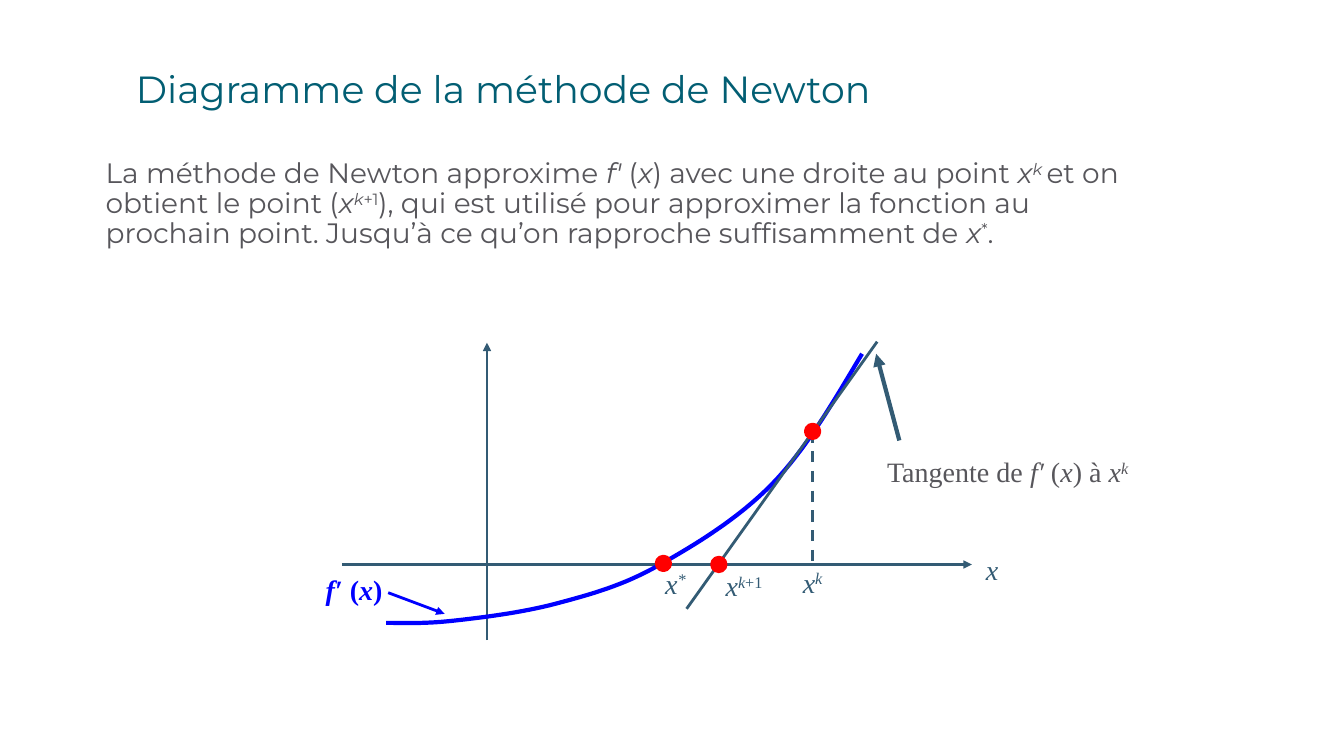
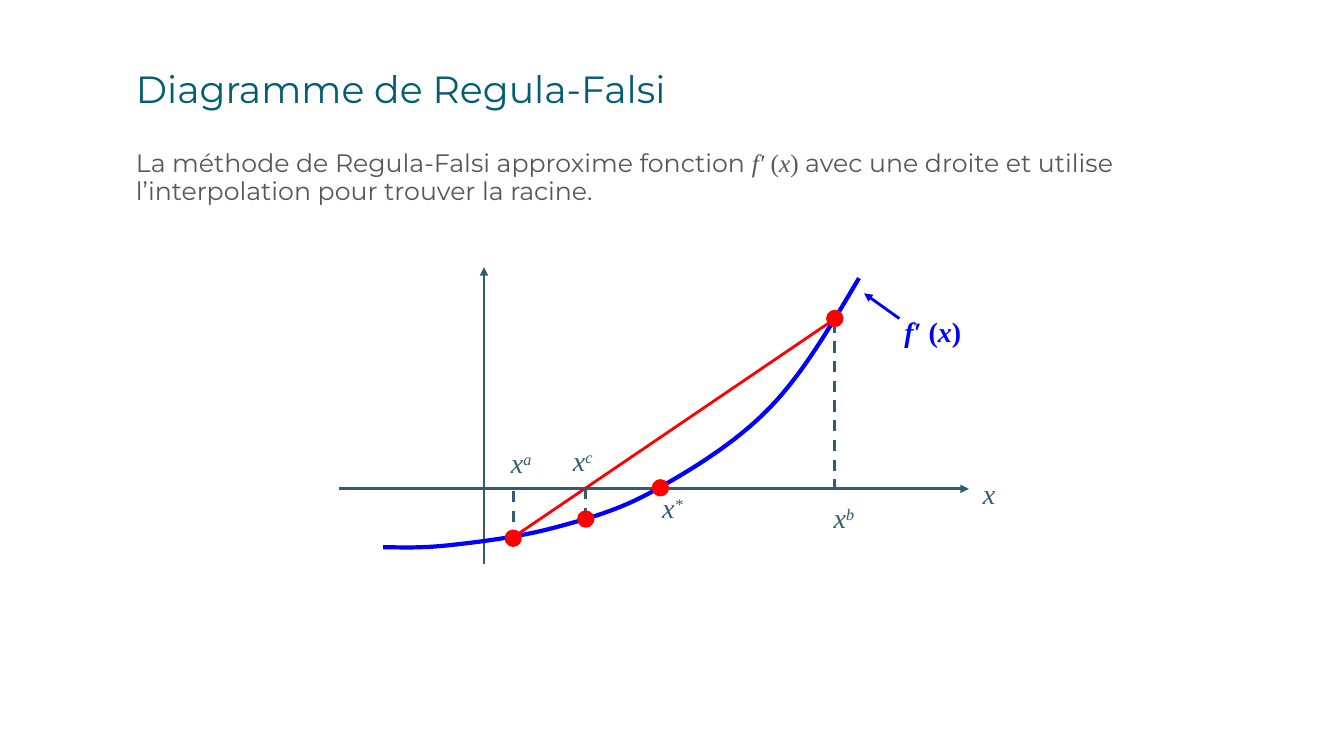
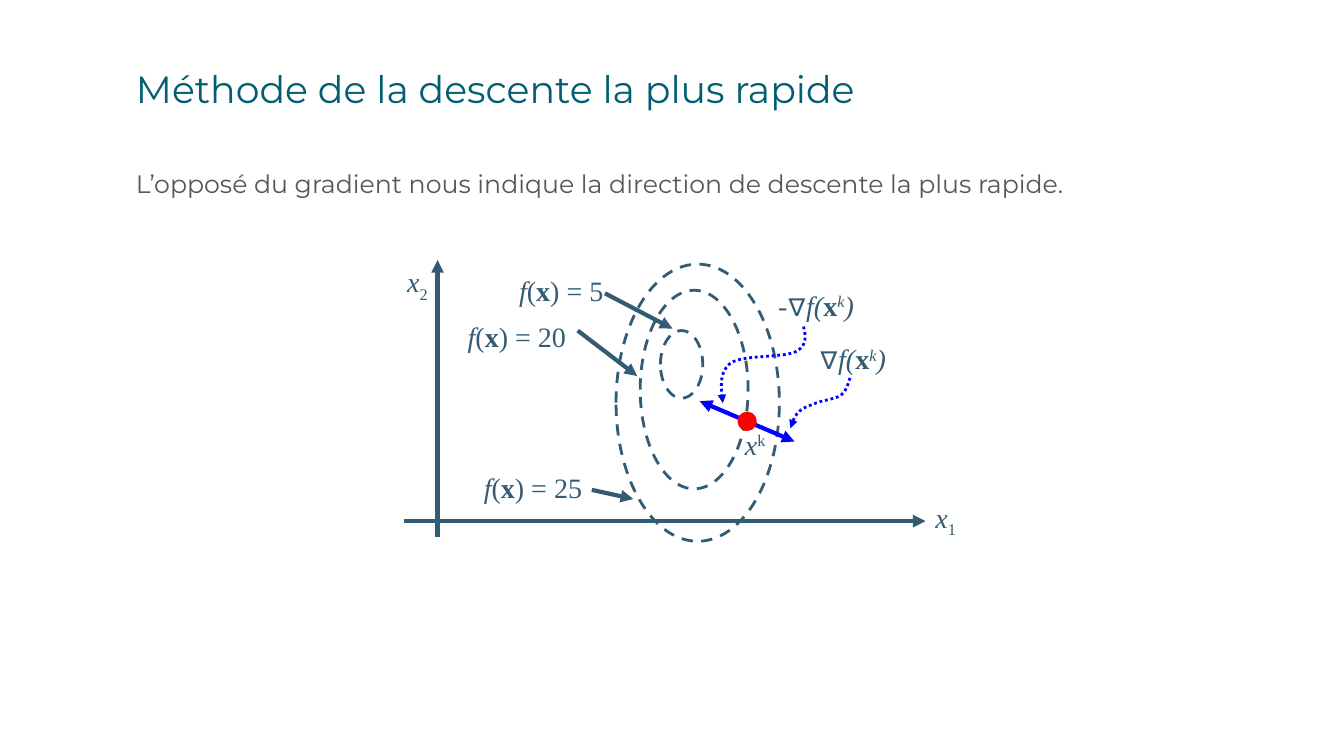
import lxml.etree
import pptx
import pptx.dml.color
import pptx.enum.dml
import pptx.enum.shapes
import pptx.enum.text
import pptx.oxml.ns
import pptx.util

Inches = pptx.util.Inches
SHAPE = pptx.enum.shapes.MSO_SHAPE
DASH = pptx.enum.dml.MSO_LINE.DASH
DOTS = pptx.enum.dml.MSO_LINE.ROUND_DOT
LEFT = pptx.enum.text.PP_ALIGN.LEFT
CENTER = pptx.enum.text.PP_ALIGN.CENTER

TEAL, GREY, SLATE = "025E73", "57565B", "335B74"
BLUE, RED = "0000FF", "FF0000"
SANS, SERIF = "Montserrat", "Times New Roman"
BASELINES = {"^": "30000", "_": "-25000"}

F_PRIME = [("f′ ", "i"), ("(", ""), ("x", "i"), (")", "")]
X_K = [("x", "i"), ("k", "i^")]
GRADIENT = [("x", "b"), ("k", "i^"), (")", "i")]
CURVE = [
    (3.83, 6.18),
    (4.02, 6.18), (4.2, 6.19), (4.48, 6.16),
    (4.76, 6.13), (5.17, 6.08), (5.51, 5.99),
    (5.85, 5.9), (6.18, 5.81), (6.53, 5.61),
    (6.89, 5.41), (7.33, 5.14), (7.66, 4.8),
    (8, 4.45), (8.27, 3.98), (8.55, 3.51),
]


def rgb(hex_colour):
    return pptx.dml.color.RGBColor.from_string(hex_colour)


def bezier_points(controls, steps=16):
    points = [controls[0]]
    for first in range(0, len(controls) - 1, 3):
        a, b, c, d = controls[first:first + 4]
        for step in range(1, steps + 1):
            t = step / steps
            u = 1 - t
            points.append(tuple(
                u**3 * a[i] + 3 * u * u * t * b[i] + 3 * u * t * t * c[i] + t**3 * d[i]
                for i in (0, 1)))
    return points


class Deck:
    def __init__(self):
        self.prs = pptx.Presentation()
        self.prs.slide_width = Inches(13.33)
        self.prs.slide_height = Inches(7.5)
        self.slide = None

    def start(self, title, body, body_box, body_size):
        self.slide = self.prs.slides.add_slide(self.prs.slide_layouts[6])
        self.text(body_box, body, size=body_size, font=SANS, colour=GREY, spacing=0.9, inset=0.1)
        self.text((1.25, 0.65, 11.5, 0.75), [(title, "")], size=27, font=SANS,
                  colour=TEAL, spacing=0.9)

    def text(self, box, runs, size=20, font=SERIF, colour=SLATE, bold=False,
             align=LEFT, spacing=1.0, inset=0.05):
        frame = self.slide.shapes.add_textbox(*map(Inches, box)).text_frame
        frame_format = {
            "word_wrap": True,
            "vertical_anchor": pptx.enum.text.MSO_ANCHOR.TOP,
            "margin_left": Inches(0.1), "margin_right": Inches(0.1),
            "margin_top": Inches(inset), "margin_bottom": Inches(inset),
        }
        for name, value in frame_format.items():
            setattr(frame, name, value)
        paragraph = frame.paragraphs[0]
        paragraph.alignment = align
        paragraph.line_spacing = spacing
        for words, marks in runs:
            run = paragraph.add_run()
            run.text = words
            run_format = {
                "name": SERIF if "s" in marks else font,
                "size": pptx.util.Pt(size),
                "bold": bold or "b" in marks,
                "italic": "i" in marks,
            }
            for name, value in run_format.items():
                setattr(run.font, name, value)
            run.font.color.rgb = rgb(colour)
            for mark, offset in BASELINES.items():
                if mark in marks:
                    run.font._element.set("baseline", offset)

    def label(self, centre, top, runs):
        self.text((centre - 0.4, top, 0.8, 0.43), runs, align=CENTER)

    def stroke(self, shape, colour, width, dash, arrow):
        shape.line.color.rgb = rgb(colour)
        shape.line.width = pptx.util.Pt(width)
        if dash:
            shape.line.dash_style = dash
        if arrow:
            outline = shape._element.spPr.find(pptx.oxml.ns.qn("a:ln"))
            lxml.etree.SubElement(outline, pptx.oxml.ns.qn("a:tailEnd"), type="triangle")

    def line(self, start, end, colour=SLATE, width=2, dash=None, arrow=False):
        connector = self.slide.shapes.add_connector(
            pptx.enum.shapes.MSO_CONNECTOR.STRAIGHT, *map(Inches, (*start, *end)))
        self.stroke(connector, colour, width, dash, arrow)
        lxml.etree.SubElement(connector._element.spPr, pptx.oxml.ns.qn("a:effectLst"))

    def curve(self, controls, width=3, dash=None, arrow=False):
        points = [(Inches(x), Inches(y)) for x, y in bezier_points(controls)]
        builder = self.slide.shapes.build_freeform(*points[0], scale=1.0)
        builder.add_line_segments(points[1:], close=False)
        outline = builder.convert_to_shape()
        outline.shadow.inherit = False
        outline.fill.background()
        self.stroke(outline, BLUE, width, dash, arrow)

    def ellipse(self, box, colour=SLATE, width=2, dash=None, filled=False):
        oval = self.slide.shapes.add_shape(SHAPE.OVAL, *map(Inches, box))
        oval.shadow.inherit = False
        if filled:
            oval.fill.solid()
            oval.fill.fore_color.rgb = rgb(colour)
        else:
            oval.fill.background()
        self.stroke(oval, colour, width, dash, False)

    def dot(self, x, y, size=0.13):
        self.ellipse((x - size / 2, y - size / 2, size, size), RED, 3, filled=True)

    def function_plot(self, dx=0, dy=0):
        self.line((4.83 + dx, 6.35 + dy), (4.83 + dx, 3.4 + dy), arrow=True)
        self.line((3.39 + dx, 5.6 + dy), (9.64 + dx, 5.6 + dy), arrow=True)
        self.label(9.84 + dx, 5.43 + dy, [("x", "i")])
        self.curve([(x + dx, y + dy) for x, y in CURVE])
        self.dot(6.58 + dx, 5.59 + dy)
        self.label(6.7 + dx, 5.57 + dy, [("x", "i"), ("*", "i^")])

    def function_name(self, left, top, start, end):
        self.text((left, top, 0.92, 0.43), F_PRIME, colour=BLUE, bold=True)
        self.line(start, end, BLUE, arrow=True)


def newton(deck):
    body = [
        ("La méthode de Newton approxime ", ""), *F_PRIME,
        (" avec une droite au point ", ""), ("x", "i"), ("k ", "i^"),
        ("et on obtient le point (", ""), ("x", "i"), ("k", "i^"), ("+1", "^"),
        ("), qui est utilisé pour approximer la fonction au prochain point. "
         "Jusqu’à ce qu’on rapproche suffisamment de ", ""),
        ("x", "i"), ("*", "^"), (".", ""),
    ]
    deck.start("Diagramme de la méthode de Newton", body, (0.95, 1.48, 10.6, 1.11), 20)
    deck.function_plot()
    deck.label(7.38, 5.59, [*X_K, ("+1", "^")])
    deck.line((8.06, 4.28), (8.06, 5.6), dash=DASH)
    deck.label(8.06, 5.56, X_K)
    deck.line((8.7, 3.39), (6.81, 6.04))
    deck.dot(8.06, 4.28)
    deck.dot(7.13, 5.6)
    deck.line((8.92, 4.37), (8.69, 3.51), width=3, arrow=True)
    deck.text((8.7, 4.46, 2.77, 0.44),
              [("Tangente de ", ""), *F_PRIME, (" à ", ""), *X_K], colour=GREY)
    deck.function_name(3.13, 5.63, (3.85, 5.88), (4.41, 6.09))


def regula_falsi(deck):
    body = [
        ("La méthode de Regula-Falsi approxime fonction ", ""),
        *[(words, marks + "s") for words, marks in F_PRIME],
        (" avec une droite et utilise l’interpolation pour trouver la racine.", ""),
    ]
    deck.start("Diagramme de Regula-Falsi", body, (1.25, 1.4, 11.5, 0.5), 18)
    deck.function_plot(-0.03, -0.75)
    deck.line((5.09, 5.33), (8.3, 3.15), RED)
    for name, x, dash_start, dash_end, dot_y, label_x, label_y in (
        ("a", 5.09, 4.87, 5.34, 5.34, 5.17, 4.37),
        ("b", 8.28, 3.19, 4.84, 3.16, 8.37, 4.92),
        ("c", 5.81, 5.15, 4.83, 5.15, 5.78, 4.35),
    ):
        deck.line((x, dash_start), (x, dash_end), dash=DASH)
        deck.dot(x, dot_y)
        deck.label(label_x, label_y, [("x", "i"), (name, "i^")])
    deck.function_name(8.87, 3.07, (8.92, 3.16), (8.57, 2.91))


def steepest_descent(deck):
    body = [("L’opposé du gradient nous indique la direction de descente la plus rapide.", "")]
    deck.start("Méthode de la descente la plus rapide", body, (1.25, 1.6, 11.5, 0.5), 18)
    deck.line((4.34, 5.33), (4.34, 2.58), width=3, arrow=True)
    deck.line((4.01, 5.17), (9.18, 5.17), width=3, arrow=True)
    for index, left, top in (("1", 9.18, 4.92), ("2", 3.94, 2.58)):
        deck.text((left, top, 0.58, 0.44), [("x", "i"), (index, "_")])
    for level, contour, left, top, start, end in (
        (5, (6.55, 3.28, 0.42, 0.67), 5.05, 2.66, (6, 2.91), (6.67, 3.26)),
        (20, (6.35, 2.88, 1.07, 1.97), 4.54, 3.12, (5.73, 3.28), (6.32, 3.73)),
        (25, (6.11, 2.62, 1.62, 2.75), 4.7, 4.62, (5.87, 4.86), (6.28, 4.95)),
    ):
        deck.ellipse(contour, dash=DASH)
        deck.text((left, top, 1.5, 0.44),
                  [("f", "i"), ("(", ""), ("x", "b"), (f") = {level}", "")])
        deck.line(start, end, width=3, arrow=True)
    for tip in ((6.94, 3.98), (7.88, 4.38)):
        deck.line((7.41, 4.18), tip, BLUE, 3, arrow=True)
    deck.dot(7.41, 4.18, 0.15)
    deck.text((7.29, 4.19, 0.58, 0.44), [("x", "i"), ("k", "^")])
    deck.text((8.03, 3.34, 1.1, 0.44), [("∇f(", "i"), *GRADIENT])
    deck.text((7.62, 2.81, 1.1, 0.44), [("-∇f(", "i"), *GRADIENT])
    descent_pointer = [
        (7.97, 3.24),
        (7.99, 3.33), (8.01, 3.43), (7.89, 3.49),
        (7.77, 3.55), (7.37, 3.52), (7.25, 3.6),
        (7.13, 3.69), (7.15, 3.84), (7.17, 4),
    ]
    gradient_pointer = [
        (8.43, 3.75),
        (8.41, 3.81), (8.4, 3.87), (8.34, 3.92),
        (8.29, 3.96), (8.16, 3.97), (8.09, 4),
        (8.02, 4.03), (7.97, 4.04), (7.93, 4.08),
        (7.88, 4.12), (7.86, 4.19), (7.84, 4.25),
    ]
    for pointer in (descent_pointer, gradient_pointer):
        deck.curve(pointer, width=2, dash=DOTS, arrow=True)


def main():
    deck = Deck()
    for build in (newton, regula_falsi, steepest_descent):
        build(deck)
    deck.prs.save("out.pptx")


if __name__ == "__main__":
    main()
